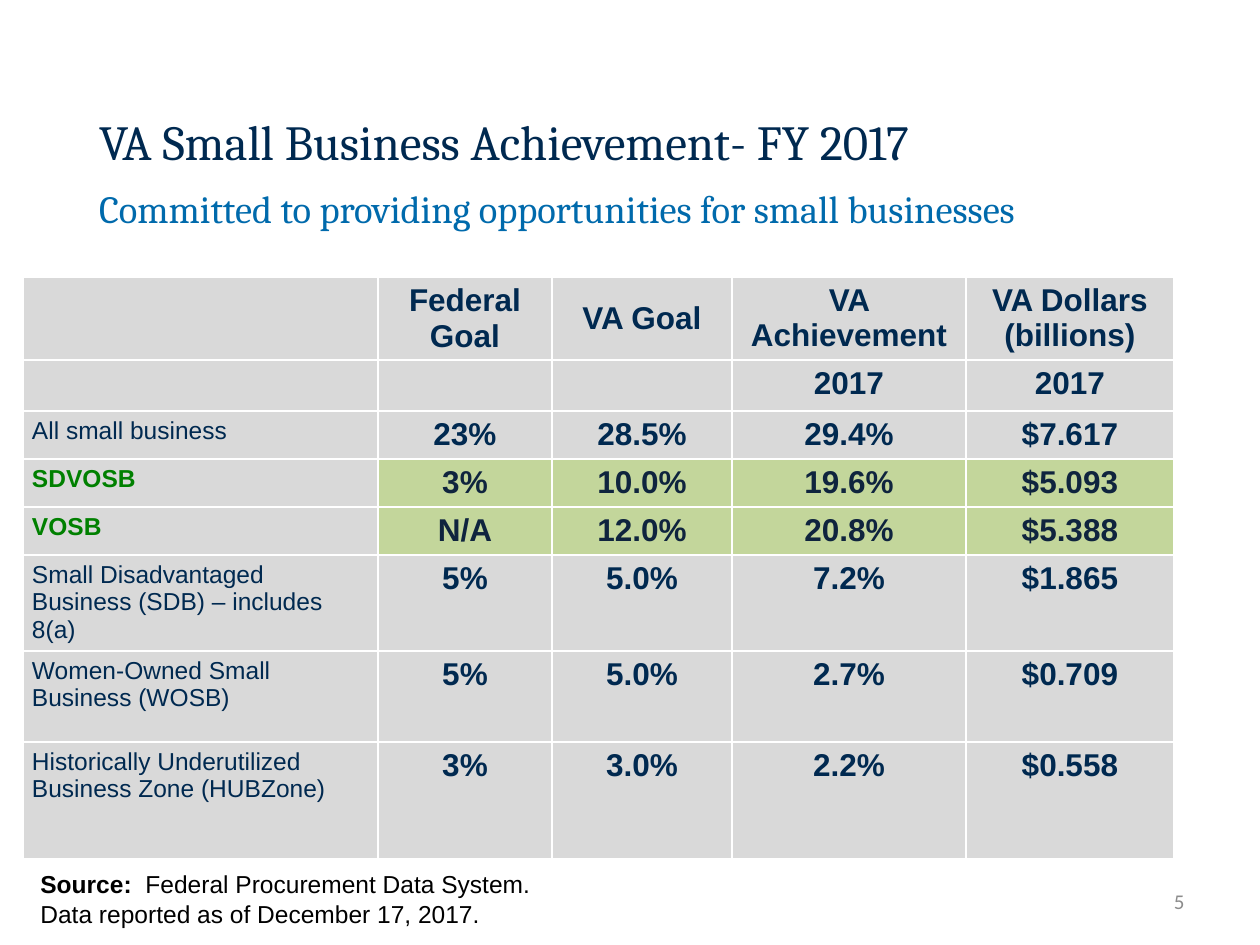
import pptx
import pptx.util
import pptx.dml.color
import pptx.enum.text

PX = 914400 // 126
ALIGN = pptx.enum.text.PP_ALIGN
ANCHOR = pptx.enum.text.MSO_ANCHOR
NAVY, GRAY, GREEN = "002950", "D9D9D9", "C3D69B"


def color(value):
    return pptx.dml.color.RGBColor.from_string(value)


def style(paragraph, size, name, value, bold=None, align=ALIGN.LEFT):
    paragraph.alignment = align
    paragraph.font.size = pptx.util.Pt(size)
    paragraph.font.name = name
    paragraph.font.color.rgb = color(value)
    paragraph.font.bold = bold


presentation = pptx.Presentation()
presentation.slide_width = pptx.util.Inches(10)
presentation.slide_height = pptx.util.Inches(7.5)
slide = presentation.slides.add_slide(presentation.slide_layouts[0])

headings = [
    ("VA Small Business Achievement- FY 2017", 111, 67, 28, NAVY),
    ("Committed to providing opportunities for small businesses", 185, 54, 22, "006AAC"),
]
for shape, (text, top, height, size, value) in zip(slide.placeholders, headings):
    shape.left, shape.top = 99 * PX, top * PX
    shape.width, shape.height = 1071 * PX, height * PX
    frame = shape.text_frame
    frame.text = text
    frame.auto_size = pptx.enum.text.MSO_AUTO_SIZE.NONE
    frame.vertical_anchor = ANCHOR.TOP
    frame.margin_left = frame.margin_right = frame.margin_top = frame.margin_bottom = 0
    frame.paragraphs[0].space_before = pptx.util.Pt(0)
    style(frame.paragraphs[0], size, "Cambria", value)

rows = [
    ("", "Federal Goal", "VA Goal", "VA Achievement", "VA Dollars (billions)"),
    ("", "", "", "2017", "2017"),
    ("All small business", "23%", "28.5%", "29.4%", "$7.617"),
    ("SDVOSB", "3%", "10.0%", "19.6%", "$5.093"),
    ("VOSB", "N/A", "12.0%", "20.8%", "$5.388"),
    ("Small Disadvantaged Business (SDB) – includes 8(a)", "5%", "5.0%", "7.2%", "$1.865"),
    ("Women-Owned Small Business (WOSB)", "5%", "5.0%", "2.7%", "$0.709"),
    ("Historically Underutilized Business Zone (HUBZone)", "3%", "3.0%", "2.2%", "$0.558"),
]
column_widths = [355, 174, 180, 234, 208]
row_heights = [83, 51, 48, 48, 48, 96, 91, 117]
table = slide.shapes.add_table(
    len(rows), len(column_widths), 23 * PX, 277 * PX,
    sum(column_widths) * PX, sum(row_heights) * PX).table
table.first_row = False
table.horz_banding = False
for column, width in zip(table.columns, column_widths):
    column.width = width * PX
for row, height in zip(table.rows, row_heights):
    row.height = height * PX

for row_index, row in enumerate(rows):
    veteran = row[0] in ("SDVOSB", "VOSB")
    for column_index, text in enumerate(row):
        label = column_index == 0
        cell = table.cell(row_index, column_index)
        cell.fill.solid()
        cell.fill.fore_color.rgb = color(GREEN if veteran and not label else GRAY)
        cell.margin_left = cell.margin_right = 9 * PX
        cell.margin_top = cell.margin_bottom = 6 * PX
        cell.vertical_anchor = ANCHOR.MIDDLE if row_index == 0 and column_index in (1, 2) else ANCHOR.TOP
        if not text:
            continue
        cell.text = text
        paragraph = cell.text_frame.paragraphs[0]
        if label:
            style(paragraph, 14, "Arial", "008000" if veteran else NAVY, veteran)
        else:
            style(paragraph, 18, "Arial", "0F243E" if veteran else NAVY, True, ALIGN.CENTER)

source = slide.shapes.add_textbox(28 * PX, 863 * PX, 994 * PX, 72 * PX).text_frame
source.word_wrap = True
paragraph = source.paragraphs[0]
style(paragraph, 14, "Arial", "000000")
run = paragraph.add_run()
run.text = "Source:  "
run.font.bold = True
paragraph.add_run().text = "Federal Procurement Data System."
paragraph = source.add_paragraph()
paragraph.text = "Data reported as of December 17, 2017."
style(paragraph, 14, "Arial", "000000")

number = slide.shapes.add_textbox(903 * PX, 876 * PX, 294 * PX, 50 * PX).text_frame
number.word_wrap = True
number.vertical_anchor = ANCHOR.MIDDLE
number.text = "5"
style(number.paragraphs[0], 12, "Calibri", "8C8C8C", align=ALIGN.RIGHT)

presentation.save("out.pptx")
